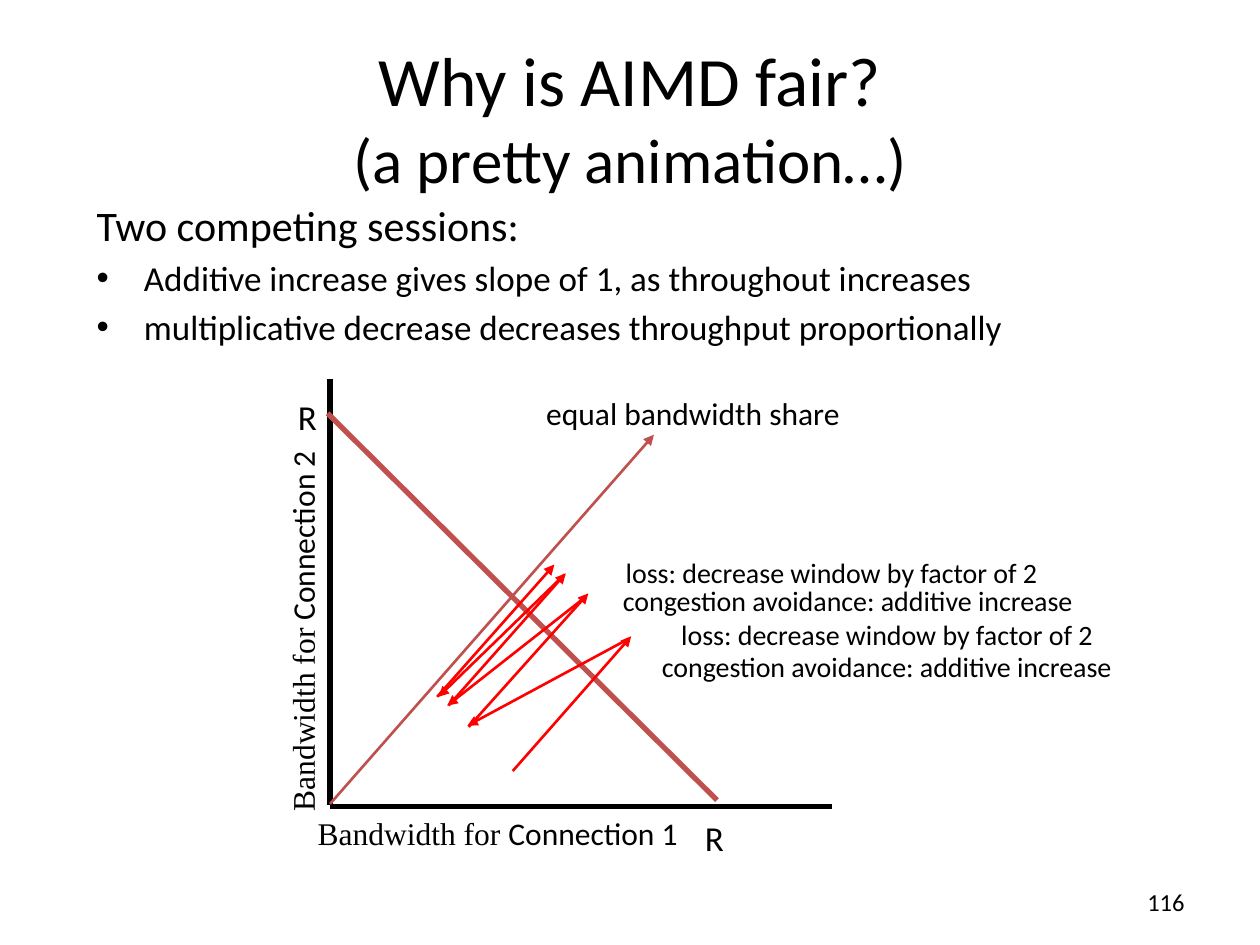
from lxml import etree
from pptx import Presentation
from pptx.dml.color import RGBColor
from pptx.enum import shapes, text
from pptx.oxml import ns
from pptx.util import Pt

BLACK, BRICK, RED = "000000", "C0504D", "FF0000"
SANS, SERIF = "Calibri", "Times New Roman"
CENTER = text.PP_ALIGN.CENTER
LOSS = "loss: decrease window by factor of 2"
INCREASE = "congestion avoidance: additive increase"


def rgb(color):
    """Turn a hex string into a colour."""
    return RGBColor.from_string(color)


def style(r, size, font=SANS):
    """Set the size, typeface and colour of a run."""
    r.font.size = Pt(size)
    r.font.name = font
    r.font.color.rgb = rgb(BLACK)


def add_box(s, box, align=CENTER, middle=False, wrap=True):
    """Add an empty text box and return its shape."""
    sp = s.shapes.add_textbox(*map(Pt, box))
    tf = sp.text_frame
    tf.word_wrap = wrap
    if middle:
        tf.vertical_anchor = text.MSO_ANCHOR.MIDDLE
    tf.paragraphs[0].alignment = align
    return sp


def add_label(s, words, box, size, **options):
    """Add a text box holding one line in one style."""
    p = add_box(s, box, **options).text_frame.paragraphs[0]
    p.text = words
    style(p.runs[0], size)


def add_title(s, lines, sizes, box):
    """Add a centred title with a line break between its lines."""
    p = add_box(s, box, middle=True).text_frame.paragraphs[0]
    p.text = "\v".join(lines)
    for r, size in zip(p.runs, sizes):
        style(r, size)


def add_body(s, heading, bullets, box):
    """Add a heading followed by bulleted paragraphs."""
    tf = add_box(s, box, align=None).text_frame
    tf.text = "\n".join([heading] + bullets)
    for i, p in enumerate(tf.paragraphs):
        style(p.runs[0], 20 if i else 24)
        pPr = p._p.get_or_add_pPr()
        pPr.set("marL", str(Pt(27)))
        pPr.set("indent", str(-Pt(27)))
        if i:
            p.space_before = Pt(4)
            etree.SubElement(pPr, ns.qn("a:buFont"), typeface="Arial")
            etree.SubElement(pPr, ns.qn("a:buChar"), char="•")


def add_axis_name(s, connection, box, rotation=0):
    """Add an axis name set in two typefaces."""
    sp = add_box(s, box)
    sp.rotation = rotation
    p = sp.text_frame.paragraphs[0]
    for words, font in (("Bandwidth for ", SERIF), (connection, SANS)):
        r = p.add_run()
        r.text = words
        style(r, 18, font)


def add_line(s, points, color, width, arrow=False):
    """Add a straight line, with an arrowhead at its end if wanted."""
    sp = s.shapes.add_connector(shapes.MSO_CONNECTOR.STRAIGHT, *map(Pt, points))
    sp.line.color.rgb = rgb(color)
    sp.line.width = Pt(width)
    if arrow:
        etree.SubElement(sp.line._get_or_add_ln(), ns.qn("a:tailEnd"), type="triangle")
    etree.SubElement(sp._element.spPr, ns.qn("a:effectLst"))


def main():
    """Build the slide and save it."""
    prs = Presentation()
    prs.slide_width, prs.slide_height = Pt(720), Pt(540)
    s = prs.slides.add_slide(prs.slide_layouts[6])

    add_label(s, "116", (516, 500.5, 168, 29), 14, align=text.PP_ALIGN.RIGHT, middle=True)
    add_title(s, ["Why is AIMD fair?", "(a pretty animation…)"], (39.6, 36),
              (36, 21.6, 648, 90))
    add_body(s, "Two competing sessions:",
             ["Additive increase gives slope of 1, as throughout increases",
              "multiplicative decrease decreases throughput proportionally"],
             (48.2, 110.2, 654, 366))

    add_line(s, (188.6, 460.8, 475.2, 460.8), BLACK, 3)
    add_line(s, (188.6, 460, 188.6, 216.7), BLACK, 3)
    add_line(s, (188.6, 459.4, 373.7, 248.4), BRICK, 1.5, arrow=True)
    add_line(s, (187.2, 236.2, 409.7, 457.2), BRICK, 3)
    for left, top in ((159.8, 222.5), (392.4, 463)):
        add_label(s, "R", (left, top, 31.7, 31), 20)
    add_label(s, "equal bandwidth share", (256.3, 221.8, 279.4, 28.8), 18)
    add_axis_name(s, "Connection 1", (144.7, 461.5, 279.4, 28.8))
    add_axis_name(s, "Connection 2", (33.1, 346.3, 279.4, 28.8), rotation=270)

    for points in ((293, 440.6, 360.7, 363.6), (359.3, 365, 267.1, 414.7),
                   (267.8, 415.4, 336.2, 339.1), (332.6, 342.7, 255.6, 403.2),
                   (256.3, 403.2, 323.3, 327.6), (322.6, 328.3, 250.6, 398.2),
                   (249.8, 398.2, 316.8, 322.6)):
        add_line(s, points, RED, 1.5, arrow=True)
    for left, top in ((328.3, 367.9), (306, 329.8)):
        add_label(s, INCREASE, (left, top, 357, 26.6), 16)
    for left, top in ((380.2, 349.2), (348.5, 313.9)):
        add_label(s, LOSS, (left, top, 253.4, 26.6), 16, wrap=False)

    prs.save("out.pptx")


if __name__ == "__main__":
    main()
